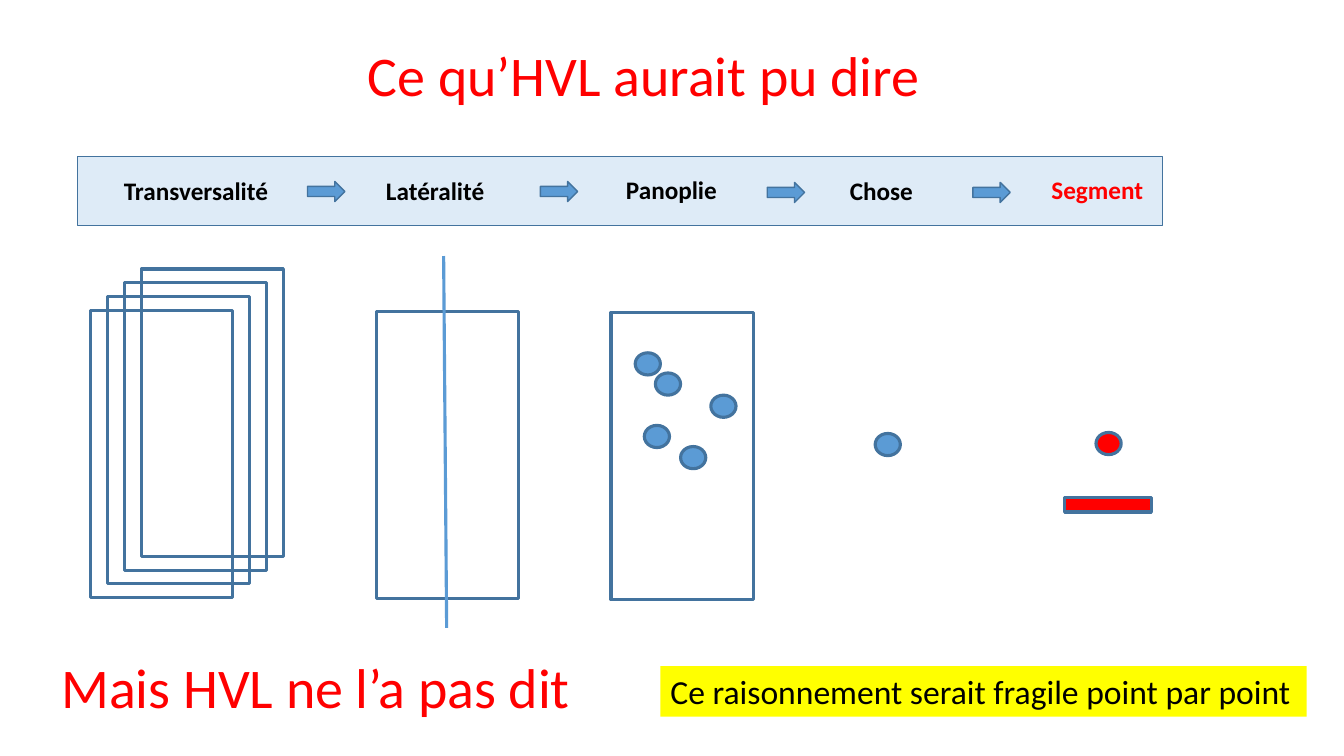
import pptx
import pptx.util
import pptx.dml.color
import pptx.enum.shapes
import pptx.enum.text
import pptx.oxml.ns
import lxml.etree

COLORS = {
    "red": "FF0000",
    "black": "000000",
    "blue": "5B9BD5",
    "outline": "43739E",
    "band": "DEEBF7",
    "yellow": "FFFF00",
}
SHAPE = pptx.enum.shapes.MSO_SHAPE


class Board:
    font = "Calibri"
    cell = pptx.util.Inches(0.1)
    thick = 2.25
    thin = 1

    def __init__(self, prs):
        self.slide = prs.slides.add_slide(prs.slide_layouts[6])
        self.shapes = self.slide.shapes

    def grid(self, *cells):
        return [round(n * self.cell) for n in cells]

    def color(self, name):
        return pptx.dml.color.RGBColor.from_string(COLORS[name])

    def shape(self, kind, col, row, cols, rows, fill=None, weight=thick):
        sp = self.shapes.add_shape(kind, *self.grid(col, row, cols, rows))
        sp.shadow.inherit = False
        if fill:
            sp.fill.solid()
            sp.fill.fore_color.rgb = self.color(fill)
        else:
            sp.fill.background()
        if weight:
            sp.line.color.rgb = self.color("outline")
            sp.line.width = pptx.util.Pt(weight)
        else:
            sp.line.fill.background()
        return sp

    def panel(self, col, row):
        return self.shape(SHAPE.RECTANGLE, col, row, 14.1, 28.5)

    def dot(self, col, row, fill="blue"):
        return self.shape(SHAPE.OVAL, col, row, 2.5, 2.2, fill)

    def arrow(self, col, row):
        return self.shape(SHAPE.RIGHT_ARROW, col, row, 3.7, 2, "blue", self.thin)

    def line(self, col1, row1, col2, row2):
        straight = pptx.enum.shapes.MSO_CONNECTOR.STRAIGHT
        ln = self.shapes.add_connector(straight, *self.grid(col1, row1, col2, row2))
        ln.line.color.rgb = self.color("blue")
        ln.line.width = pptx.util.Pt(self.thick)
        lxml.etree.SubElement(ln._element.spPr, pptx.oxml.ns.qn("a:effectLst"))

    def label(self, sp, text, size, color, bold=False):
        tf = sp.text_frame
        tf.word_wrap = False
        tf.auto_size = pptx.enum.text.MSO_AUTO_SIZE.SHAPE_TO_FIT_TEXT
        tf.vertical_anchor = pptx.enum.text.MSO_ANCHOR.TOP
        p = tf.paragraphs[0]
        p.alignment = pptx.enum.text.PP_ALIGN.LEFT
        r = p.add_run()
        r.text = text
        r.font.name = self.font
        r.font.size = pptx.util.Pt(size)
        r.font.bold = bold
        r.font.color.rgb = self.color(color)

    def text(self, text, col, row, cols, rows, size, color, bold=False):
        sp = self.shapes.add_textbox(*self.grid(col, row, cols, rows))
        self.label(sp, text, size, color, bold)


def main():
    prs = pptx.Presentation()
    prs.slide_width = pptx.util.Inches(13.33)
    prs.slide_height = pptx.util.Inches(7.5)
    b = Board(prs)

    b.text("Ce qu’HVL aurait pu dire", 35.5, 3.5, 58.6, 7.7, 40, "red")

    for i in range(4):
        b.panel(9 + 1.67 * i, 30.8 - 1.37 * i)

    b.panel(37.3, 30.9)
    b.line(44, 25.4, 44.3, 62.3)

    b.panel(60.6, 31)
    for col, row in [(63, 35), (65, 37), (70.5, 39.2), (63.9, 42.2), (67.5, 44.3)]:
        b.dot(col, row)

    b.dot(86.8, 43)
    b.dot(108.7, 42.9, "red")
    b.shape(SHAPE.RECTANGLE, 105.6, 49.4, 8.6, 1.4, "red")

    b.shapes = b.slide.shapes.add_group_shape().shapes
    b.shape(SHAPE.RECTANGLE, 7.7, 15.5, 107.6, 6.9, "band", b.thin)
    for step, col, row, cols, color in [
        ("Transversalité", 11.3, 16.9, 16.4, "black"),
        ("Latéralité", 37.3, 16.9, 11.8, "black"),
        ("Panoplie", 61.1, 16.8, 11.1, "black"),
        ("Chose", 83.3, 16.9, 8.3, "black"),
        ("Segment", 103.3, 16.8, 11.2, "red"),
    ]:
        b.text(step, col, row, cols, 4, 18, color, bold=True)
    for col, row in [(30.5, 18), (53.6, 18), (76.1, 18.1), (96.5, 18.1)]:
        b.arrow(col, row)
    b.shapes = b.slide.shapes

    remark = b.shape(SHAPE.RECTANGLE, 65.5, 66.1, 64.1, 5, "yellow", weight=None)
    b.label(remark, "Ce raisonnement serait fragile point par point", 24, "black")
    b.text("Mais HVL ne l’a pas dit", 5.1, 64.2, 54.2, 7.7, 40, "red")

    prs.save("out.pptx")


if __name__ == "__main__":
    main()
